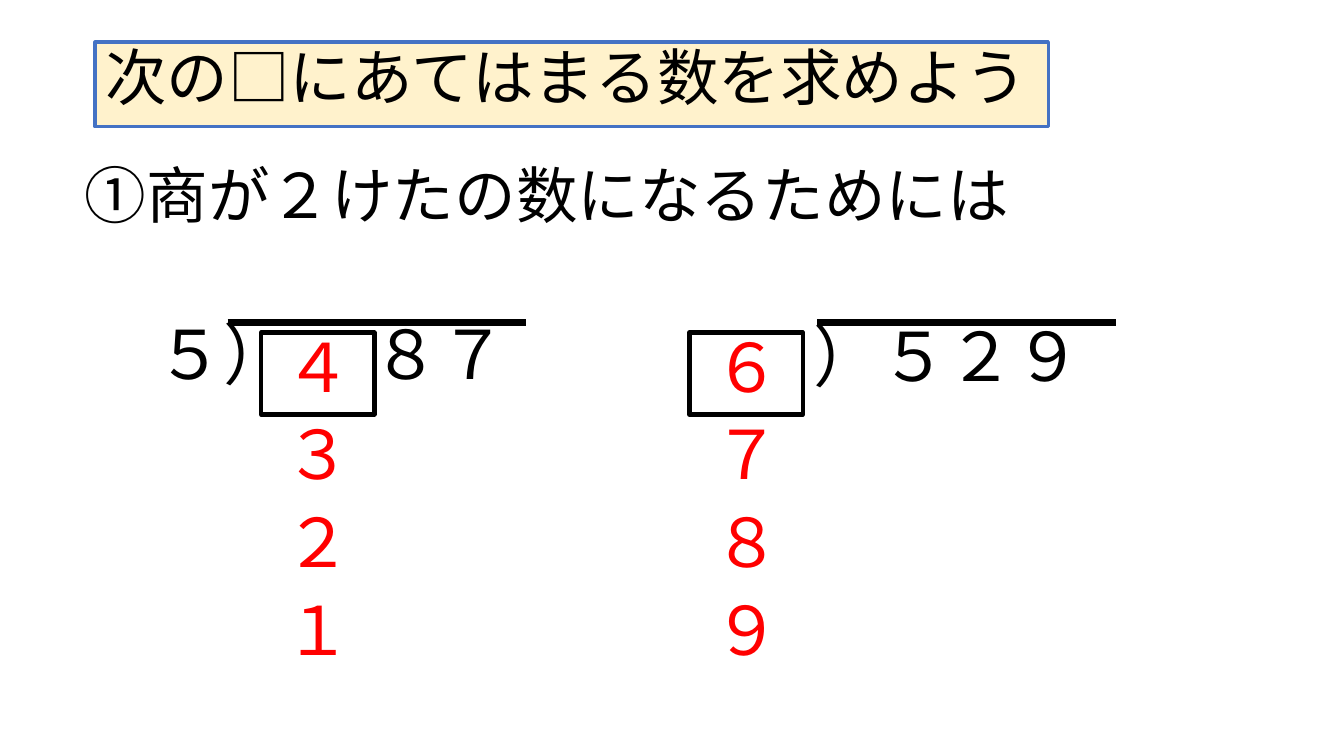
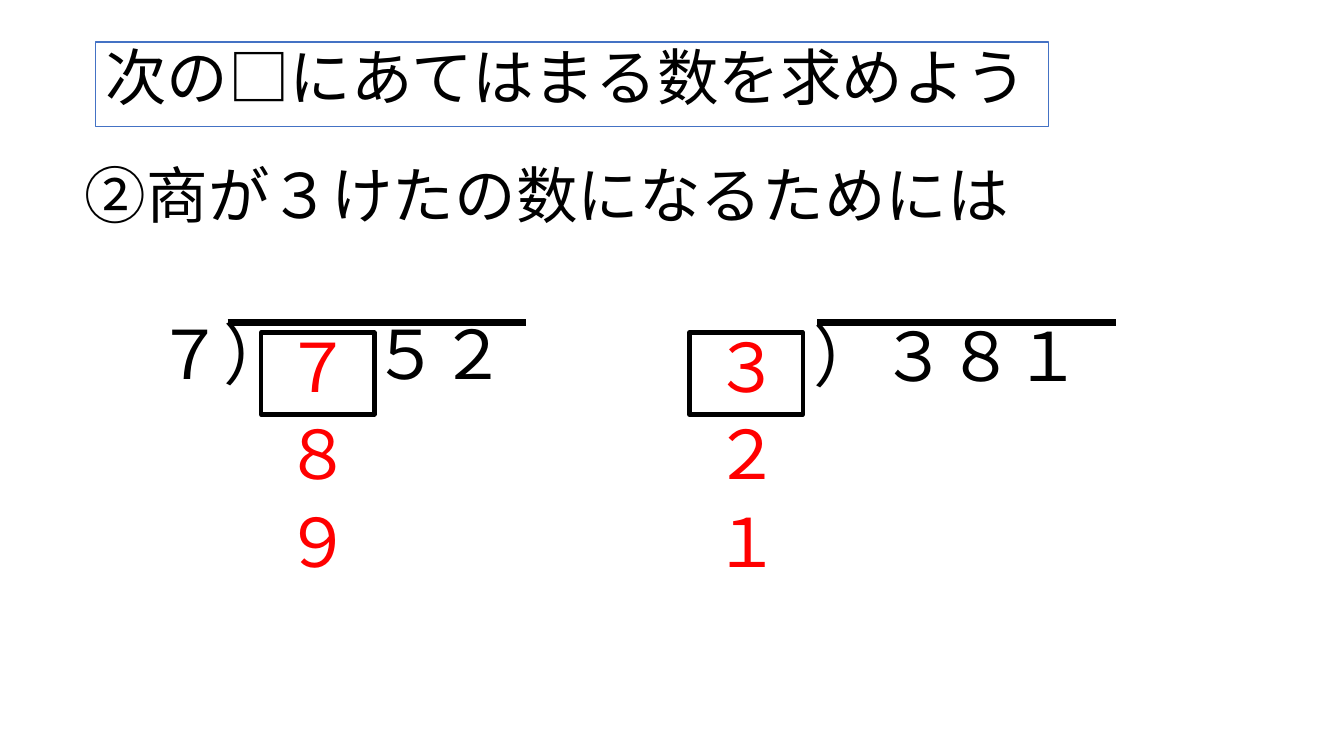
"""Two worksheet slides on finding the missing digit in a long division."""
from lxml import etree
from pptx import Presentation
from pptx.dml.color import RGBColor
from pptx.enum import shapes, text
from pptx.oxml import ns
from pptx.util import Pt

BLACK = RGBColor(0x00, 0x00, 0x00)
WHITE = RGBColor(0xFF, 0xFF, 0xFF)
RED = RGBColor(0xFF, 0x00, 0x00)
BLUE = RGBColor(0x44, 0x72, 0xC4)
CREAM = RGBColor(0xFF, 0xF2, 0xCC)
FONT = "Noto Sans CJK JP"
TITLE = "次の□にあてはまる数を求めよう"
ANSWER_TOP, ANSWER_STEP = 235.4, 62.6

SLIDES = [
    dict(question="①商が２けたの数になるためには", fill=CREAM, border=2.25,
         left=("５）", "８７", "４３２１"), right=("）５２９", "６７８９")),
    dict(question="②商が３けたの数になるためには", fill=None, border=0.75,
         left=("７）", "５２", "７８９"), right=("）３８１", "３２１")),
]


def write(sp, words, x, y, w, h=65.5, size=48, color=BLACK):
    sp.left, sp.top, sp.width, sp.height = Pt(x), Pt(y), Pt(w), Pt(h)
    tf = sp.text_frame
    tf.word_wrap = True
    tf.auto_size = text.MSO_AUTO_SIZE.NONE
    tf.vertical_anchor = text.MSO_ANCHOR.TOP
    tf.margin_left = tf.margin_right = Pt(7.2)
    tf.margin_top, tf.margin_bottom = Pt(5.6), Pt(0)
    p = tf.paragraphs[0]
    p.alignment = text.PP_ALIGN.LEFT
    p.line_spacing = 0.85
    p.space_before = Pt(0)
    r = p.add_run()
    r.text = words
    r.font.size = Pt(size)
    r.font.color.rgb = color
    r.font.name = FONT
    etree.SubElement(r._r.get_or_add_rPr(), ns.qn("a:ea"), typeface=FONT)


prs = Presentation()
prs.slide_width, prs.slide_height = Pt(960), Pt(540)

for data in SLIDES:
    s = prs.slides.add_slide(prs.slide_layouts[1])
    title, body = s.shapes.title, s.placeholders[1]
    write(title, TITLE, 67.9, 30, 681, h=60.6, size=44)
    title.line.color.rgb = BLUE
    title.line.width = Pt(data["border"])
    if data["fill"] is not None:
        title.fill.solid()
        title.fill.fore_color.rgb = data["fill"]

    write(body, data["question"], 53.5, 114.5, 681, h=60.6, size=44)
    pPr = body.text_frame.paragraphs[0]._p.get_or_add_pPr()
    pPr.set("marL", "0")
    pPr.set("indent", "0")
    etree.SubElement(pPr, ns.qn("a:buNone"))

    divisor, dividend, left_answers = data["left"]
    division, right_answers = data["right"]
    for words, x, y, w in ((divisor, 104.4, 226, 120),
                           (dividend, 258.8, 226, 120),
                           (division, 573.8, 227.5, 220)):
        write(s.shapes.add_textbox(0, 0, 0, 0), words, x, y, w)

    for box_x, bar_x, answers in ((186.5, 162.7, left_answers),
                                  (492.5, 583.9, right_answers)):
        sp = s.shapes.add_shape(shapes.MSO_SHAPE.RECTANGLE,
                                Pt(box_x), Pt(237.6), Pt(81), Pt(58.5))
        sp.shadow.inherit = False
        sp.fill.solid()
        sp.fill.fore_color.rgb = WHITE
        sp.line.color.rgb = BLACK
        sp.line.width = Pt(3)

        bar = s.shapes.add_connector(shapes.MSO_CONNECTOR.STRAIGHT,
                                     Pt(bar_x), Pt(230.4), Pt(bar_x + 213), Pt(230.4))
        bar.line.color.rgb = BLACK
        bar.line.width = Pt(4.5)
        etree.SubElement(bar._element.spPr, ns.qn("a:effectLst"))

        for i, digit in enumerate(answers):
            write(s.shapes.add_textbox(0, 0, 0, 0), digit, box_x + 10,
                  ANSWER_TOP + i * ANSWER_STEP, 72, color=RED)

prs.save("out.pptx")
